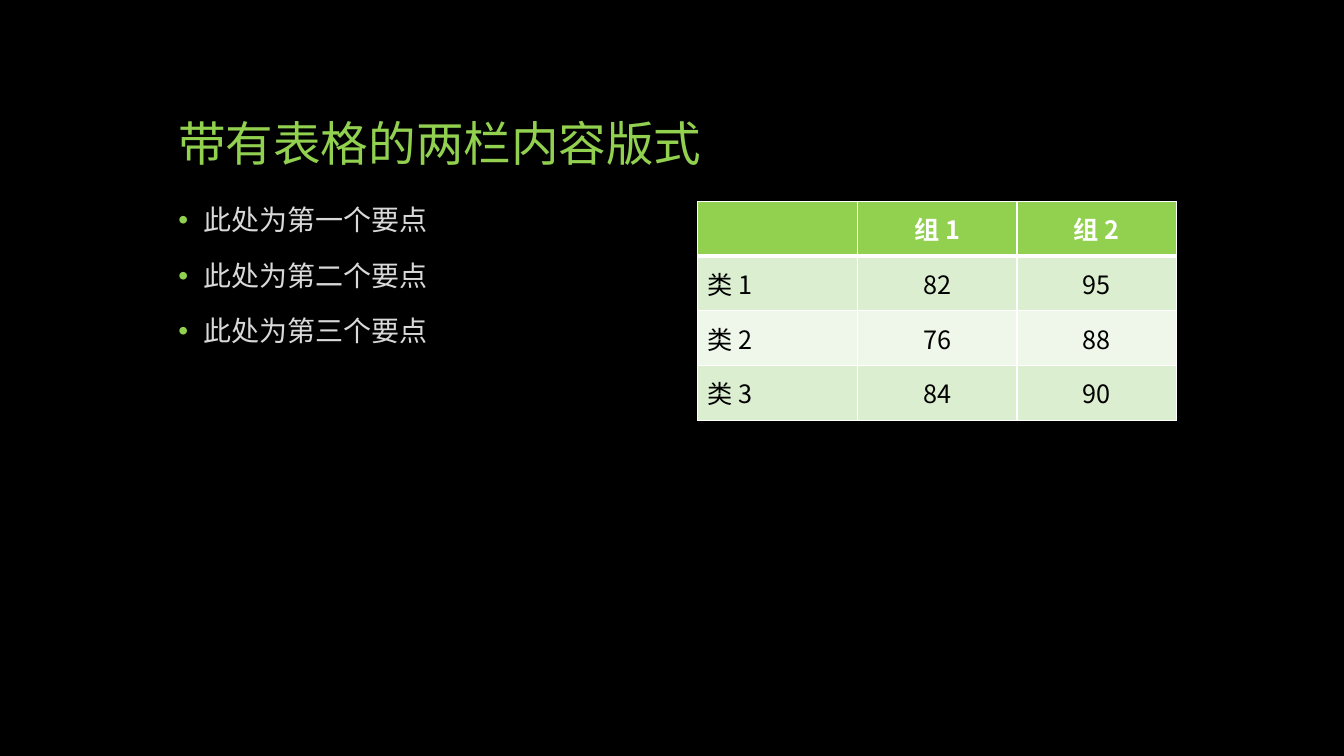
from dataclasses import dataclass

from lxml.etree import SubElement as Sub
from pptx import Presentation
from pptx.dml.color import RGBColor as RGB
from pptx.enum.text import MSO_ANCHOR as Anchor, MSO_AUTO_SIZE as Fit, PP_ALIGN as Align
from pptx.oxml.ns import qn
from pptx.util import Inches, Pt


@dataclass(frozen=True)
class Theme:
    font: str = "Noto Sans CJK SC"
    back: str = "000000"
    accent: str = "92D050"
    body: str = "D9D9D9"
    white: str = "FFFFFF"
    black: str = "000000"
    bands: tuple = ("DCEED0", "EEF7E9")
    title_size: int = 34
    body_size: int = 20
    cell_size: int = 18


THEME = Theme()
TITLE = "带有表格的两栏内容版式"
POINTS = ["此处为第一个要点", "此处为第二个要点", "此处为第三个要点"]
ROWS = [
    ["", "组 1", "组 2"],
    ["类 1", "82", "95"],
    ["类 2", "76", "88"],
    ["类 3", "84", "90"],
]


def add_run(para, text, size, color, bold=False):
    run = para.add_run()
    run.text = text
    font = run.font
    font.name, font.size, font.bold = THEME.font, Pt(size), bold
    font.color.rgb = RGB.from_string(color)
    Sub(font._element, qn("a:ea"), typeface=THEME.font)


def add_frame(slide, box):
    frame = slide.shapes.add_textbox(*map(Inches, box)).text_frame
    frame.word_wrap = True
    return frame


def add_title(slide, box):
    frame = add_frame(slide, box)
    frame.vertical_anchor = Anchor.BOTTOM
    para = frame.paragraphs[0]
    para.line_spacing = 0.9
    add_run(para, TITLE, THEME.title_size, THEME.accent)


def add_bullet(para):
    props = para._p.get_or_add_pPr()
    props.set("marL", str(Inches(0.25)))
    props.set("indent", str(Inches(-0.25)))
    color = Sub(props, qn("a:buClr"))
    Sub(color, qn("a:srgbClr"), val=THEME.accent)
    Sub(props, qn("a:buFont"), typeface="Arial")
    Sub(props, qn("a:buChar"), char="•")


def add_points(slide, box):
    frame = add_frame(slide, box)
    frame.auto_size = Fit.TEXT_TO_FIT_SHAPE
    for i, text in enumerate(POINTS):
        para = frame.add_paragraph() if i else frame.paragraphs[0]
        para.line_spacing = 0.9
        para.space_before = Pt(18)
        add_bullet(para)
        add_run(para, text, THEME.body_size, THEME.body)


def set_edges(cell, widths):
    """Draw white borders, given as points for left, right, top and bottom."""
    props = cell._tc.get_or_add_tcPr()
    for i, (side, width) in enumerate(zip("LRTB", widths)):
        line = props.makeelement(qn(f"a:ln{side}"), {"w": str(Pt(width))})
        fill = Sub(line, qn("a:solidFill"))
        Sub(fill, qn("a:srgbClr"), val=THEME.white)
        props.insert(i, line)


def add_grid(slide, box):
    count, width = len(ROWS), len(ROWS[0])
    grid = slide.shapes.add_table(count, width, *map(Inches, box)).table
    for r, row in enumerate(ROWS):
        head = r == 0
        fill = THEME.accent if head else THEME.bands[(r - 1) % 2]
        for c, text in enumerate(row):
            cell = grid.cell(r, c)
            cell.fill.solid()
            cell.fill.fore_color.rgb = RGB.from_string(fill)
            cell.vertical_anchor = Anchor.MIDDLE
            set_edges(cell, (1, 1, 3 if r == 1 else 1, 3 if head else 1))
            para = cell.text_frame.paragraphs[0]
            para.alignment = Align.CENTER if c else Align.LEFT
            if text:
                color = THEME.white if head else THEME.black
                add_run(para, text, THEME.cell_size, color, head)


def main():
    deck = Presentation()
    deck.slide_width, deck.slide_height = Inches(13.33), Inches(7.5)
    slide = deck.slides.add_slide(deck.slide_layouts[6])
    back = slide.background.fill
    back.solid()
    back.fore_color.rgb = RGB.from_string(THEME.back)

    left, top, width, gap = 1.67, 2, 4.75, 0.5
    add_title(slide, (left, 0.5, 2 * width + gap, 1.25))
    add_points(slide, (left, top, width, 4.67))
    add_grid(slide, (left + width + gap, top, width, 2.17))
    deck.save("out.pptx")


if __name__ == "__main__":
    main()
